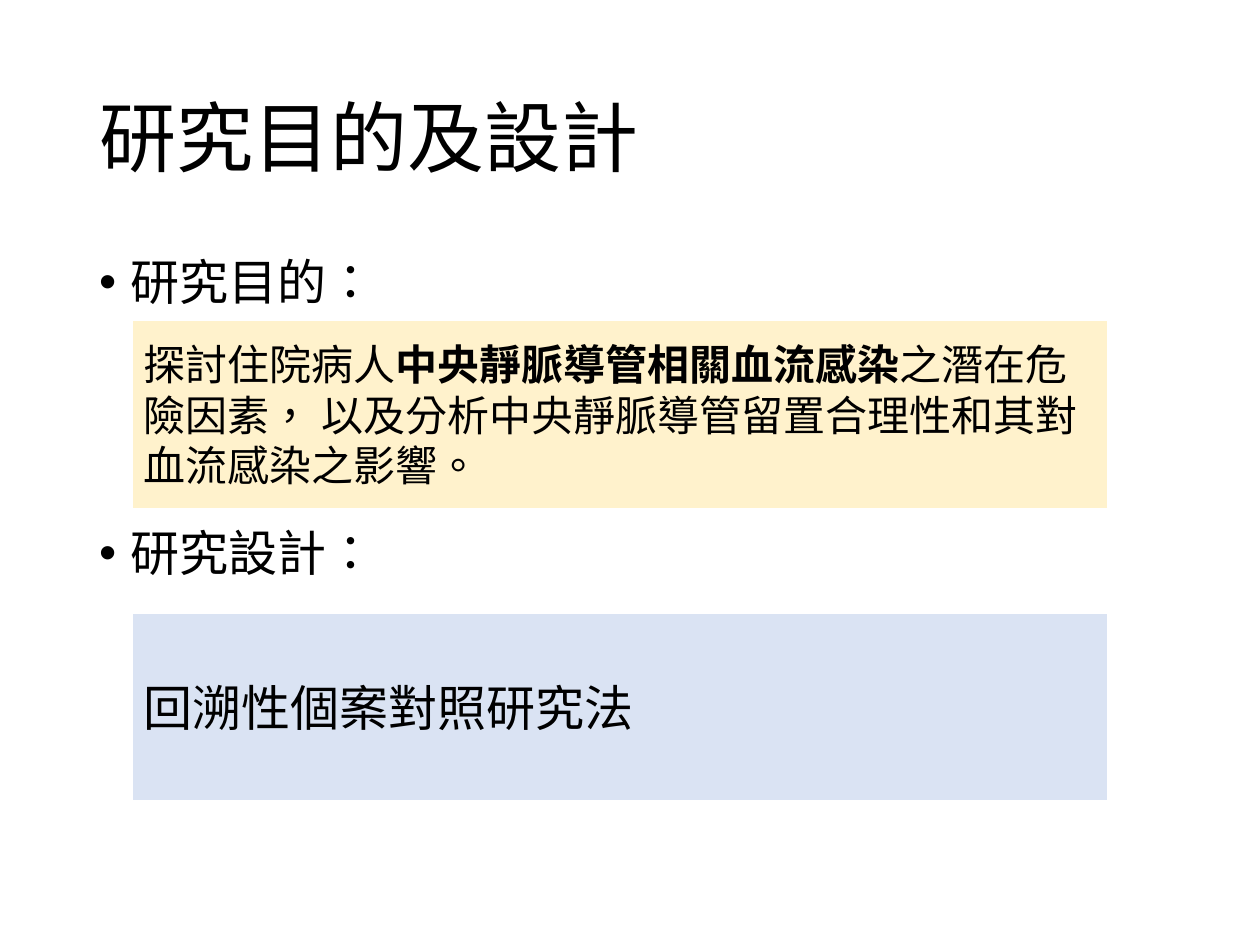
import pptx
import pptx.dml.color
import pptx.enum.lang
import pptx.enum.shapes
import pptx.enum.text
import pptx.oxml.ns
import pptx.util
import lxml.etree

COLORS = {"text": "000000", "purpose": "FFF2CC", "design": "DAE3F3", "border": "FFFFFF"}


class SlideBuilder:
    font = "Noto Sans CJK SC"

    def __init__(self, slide):
        self.slide = slide

    def color(self, name):
        return pptx.dml.color.RGBColor.from_string(COLORS[name])

    def place(self, holder, left, top, width, height):
        holder.left, holder.top = pptx.util.Pt(left), pptx.util.Pt(top)
        holder.width, holder.height = pptx.util.Pt(width), pptx.util.Pt(height)

    def format_run(self, run, size, bold=False):
        run.font.name = self.font
        run.font.size = pptx.util.Pt(size)
        run.font.bold = bold
        run.font.color.rgb = self.color("text")
        run.font.language_id = pptx.enum.lang.MSO_LANGUAGE_ID.TRADITIONAL_CHINESE
        latin = run.font._element.find(pptx.oxml.ns.qn("a:latin"))
        east_asian = lxml.etree.Element(pptx.oxml.ns.qn("a:ea"), typeface=self.font)
        latin.addnext(east_asian)

    def format_frame(self, frame, anchor):
        frame.word_wrap = True
        frame.auto_size = pptx.enum.text.MSO_AUTO_SIZE.NONE
        frame.vertical_anchor = anchor

    def title(self, text, box):
        heading = self.slide.shapes.title
        self.place(heading, *box)
        self.format_frame(heading.text_frame, pptx.enum.text.MSO_ANCHOR.MIDDLE)
        heading.text_frame.text = text
        paragraph = heading.text_frame.paragraphs[0]
        paragraph.alignment = pptx.enum.text.PP_ALIGN.LEFT
        paragraph.line_spacing = 0.9
        self.format_run(paragraph.runs[0], 44)

    def bullets(self, items, box):
        body = self.slide.placeholders[1]
        self.place(body, *box)
        frame = body.text_frame
        self.format_frame(frame, pptx.enum.text.MSO_ANCHOR.TOP)
        frame.text = "\n".join(text for text, _ in items)
        for paragraph, (_, space_before) in zip(frame.paragraphs, items):
            paragraph.line_spacing = 0.9
            paragraph.space_before = pptx.util.Pt(space_before)
            properties = paragraph._p.get_or_add_pPr()
            properties.set("marL", str(pptx.util.Pt(18)))
            properties.set("indent", str(-pptx.util.Pt(18)))
            for tag, attributes in (("a:buFont", {"typeface": "Arial"}), ("a:buChar", {"char": "•"})):
                lxml.etree.SubElement(properties, pptx.oxml.ns.qn(tag), attributes)
            self.format_run(paragraph.runs[0], 28)

    def panel(self, pieces, fill, size, box):
        panel = self.slide.shapes.add_shape(
            pptx.enum.shapes.MSO_SHAPE.RECTANGLE, *map(pptx.util.Pt, box))
        panel.shadow.inherit = False
        panel.fill.solid()
        panel.fill.fore_color.rgb = self.color(fill)
        panel.line.color.rgb = self.color("border")
        panel.line.width = pptx.util.Pt(1.5)
        self.format_frame(panel.text_frame, pptx.enum.text.MSO_ANCHOR.MIDDLE)
        paragraph = panel.text_frame.paragraphs[0]
        paragraph.alignment = pptx.enum.text.PP_ALIGN.LEFT
        for text, bold in pieces:
            run = paragraph.add_run()
            run.text = text
            self.format_run(run, size, bold)


def main():
    presentation = pptx.Presentation()
    presentation.slide_width = pptx.util.Pt(720)
    presentation.slide_height = pptx.util.Pt(540)
    builder = SlideBuilder(presentation.slides.add_slide(presentation.slide_layouts[1]))

    builder.title("研究目的及設計", (49.5, 28.75, 621, 104.4))
    builder.bullets([("研究目的：", 10), ("研究設計：", 124.6)], (49.5, 143.75, 621, 342.6))

    purpose = [
        ("探討住院病人", False),
        ("中央靜脈導管相關血流感染", True),
        ("之潛在危險因素， 以及分析中央靜脈導管留置合理性和其對血流感染之影響。", False),
    ]
    design = [("回溯性個案對照研究法", False)]
    panel_left, panel_width, panel_height = 75, 558.5, 108
    builder.panel(purpose, "purpose", 24, (panel_left, 182.9, panel_width, panel_height))
    builder.panel(design, "design", 28, (panel_left, 349.9, panel_width, panel_height))

    presentation.save("out.pptx")


if __name__ == "__main__":
    main()
